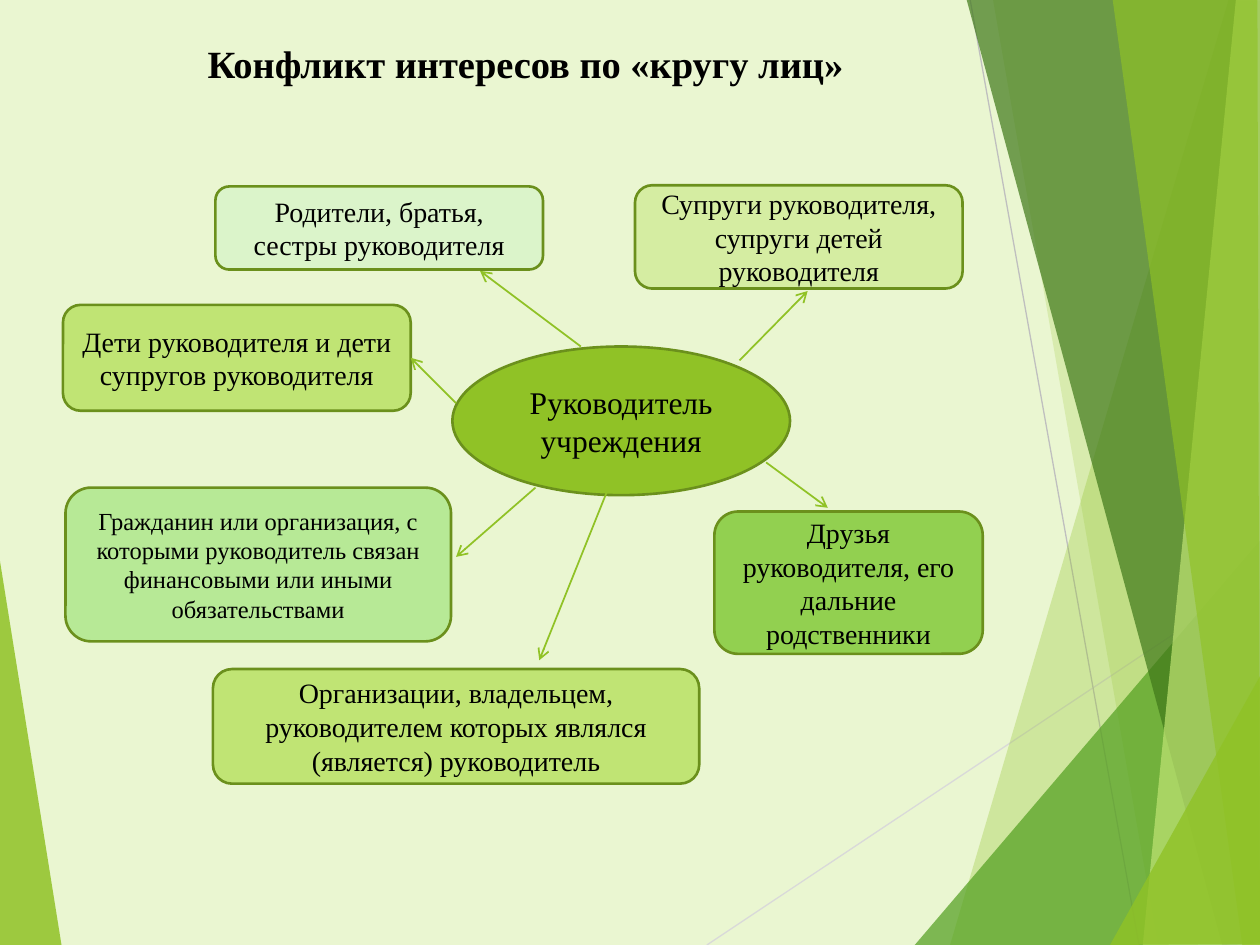
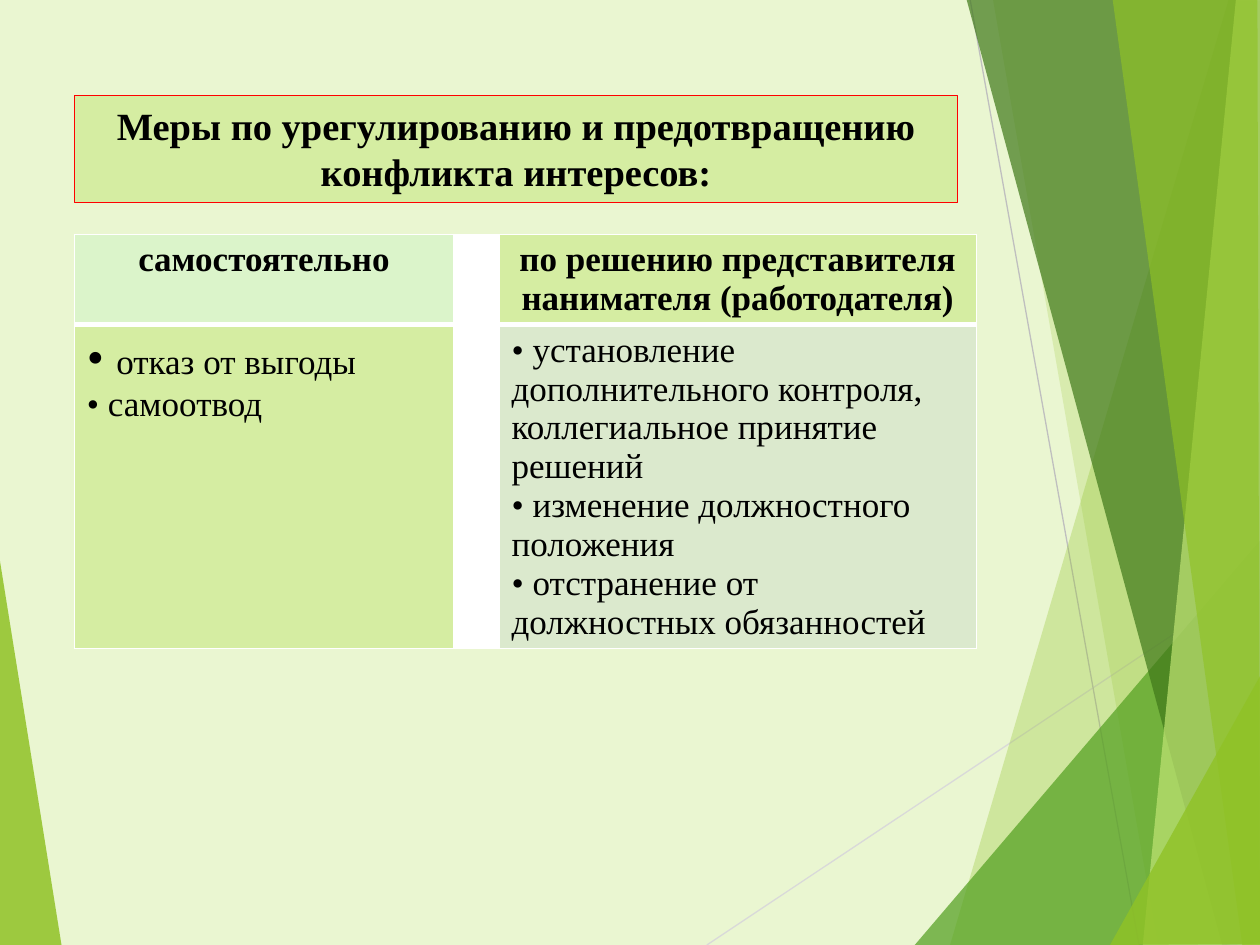
from lxml.etree import SubElement
from pptx import Presentation
from pptx.dml.color import RGBColor
from pptx.enum.shapes import MSO_CONNECTOR as Connector, MSO_SHAPE as Shape
from pptx.enum.text import MSO_ANCHOR as Anchor, MSO_AUTO_SIZE as AutoSize, PP_ALIGN as Align
from pptx.oxml.ns import qn
from pptx.util import Inches, Pt

FONT = "Times New Roman"
BLACK = RGBColor(0x00, 0x00, 0x00)
WHITE = RGBColor(0xFF, 0xFF, 0xFF)
RED = RGBColor(0xFF, 0x00, 0x00)
BACKGROUND = RGBColor(0xEA, 0xF6, 0xD1)
GREEN = RGBColor(0x90, 0xC2, 0x26)
OUTLINE = RGBColor(0x6B, 0x90, 0x1C)
LEAF = RGBColor(0x54, 0xA0, 0x21)
FOREST = RGBColor(0x3F, 0x78, 0x19)
LIME = RGBColor(0xC0, 0xE4, 0x74)
PALE_LIME = RGBColor(0xD5, 0xED, 0xA2)
MINT = RGBColor(0xDB, 0xF4, 0xCA)
FRESH = RGBColor(0x92, 0xD0, 0x50)
SOFT_GREEN = RGBColor(0xB7, 0xE9, 0x96)
GREY_GREEN = RGBColor(0xDB, 0xE9, 0xCD)
LIGHT_GREY = RGBColor(0xD9, 0xD9, 0xD9)
GREY = RGBColor(0xBF, 0xBF, 0xBF)

LEFT_WEDGE = (GREEN, 85, [(-0.01, 4.39), (0.49, 7.51), (-0.01, 7.5)])
THIN_LINES = [
    (LIGHT_GREY, (5.61, 7.5), (10.01, 4.57)),
    (GREY, (7.7, 0), (9.04, 7.5)),
]
RIGHT_FACETS = [
    (GREEN, 30, [(9.75, 0), (7.54, 7.5), (10.02, 7.51), (10.01, 0.01)]),
    (GREEN, 20, [(7.88, -0.01), (9.19, 7.5), (10.01, 7.5), (10.01, -0.01)]),
    (LEAF, 72, [(7.26, 7.5), (10, 4.29), (10.01, 7.5)]),
    (FOREST, 70, [(7.67, -0.01), (9.7, 7.5), (10.01, 7.49), (10.01, -0.01)]),
    (LIME, 70, [(9.81, -0.01), (9.07, 7.5), (10.01, 7.5), (10, -0.01)]),
    (GREEN, 65, [(8.83, -0.01), (9.86, 7.5), (10, 7.5), (9.98, -0.01)]),
    (GREEN, 80, [(8.81, 7.5), (10.01, 5.35), (10.01, 7.49)]),
]

CIRCLE_TITLE = "Конфликт интересов по «кругу лиц»"
MANAGER = ("Руководитель учреждения", (3.59, 2.75, 2.68, 1.18), GREEN, 18)
RELATED_PERSONS = {
    "children": ("Дети руководителя и дети супругов руководителя",
                 (0.5, 2.42, 2.76, 0.84), LIME, 16),
    "spouses": ("Супруги руководителя, супруги детей руководителя",
                (5.04, 1.47, 2.6, 0.82), PALE_LIME, 16),
    "parents": ("Родители, братья, сестры руководителя",
                (1.71, 1.48, 2.6, 0.66), MINT, 16),
    "friends": ("Друзья руководителя, его дальние родственники",
                (5.67, 4.06, 2.13, 1.13), FRESH, 16),
    "obligations": ("Гражданин или организация, с которыми руководитель связан "
                    "финансовыми или иными обязательствами",
                    (0.52, 3.87, 3.06, 1.22), SOFT_GREEN, 14),
    "organizations": ("Организации, владельцем, руководителем которых являлся "
                      "(является) руководитель",
                      (1.69, 5.31, 3.86, 0.91), LIME, 16),
}
ARROWS = {
    "parents": ((4.61, 2.75), (3.81, 2.15)),
    "spouses": ((5.87, 2.86), (6.41, 2.31)),
    "children": ((3.62, 3.2), (3.26, 2.84)),
    "obligations": ((4.25, 3.87), (3.62, 4.42)),
    "organizations": ((4.83, 3.87), (4.28, 5.24)),
    "friends": ((6.08, 3.67), (6.57, 4.03)),
}

MEASURES_TITLE = "Меры по урегулированию и предотвращению конфликта интересов:"
COLUMN_WIDTHS = [3.01, 0.36, 3.79]
ROW_HEIGHTS = [0.71, 2.57]
MEASURES = [
    [("самостоятельно", MINT), ("", WHITE),
     ("по решению представителя нанимателя (работодателя)", PALE_LIME)],
    [(["отказ от выгоды", "самоотвод"], PALE_LIME), ("", WHITE),
     (["установление дополнительного контроля, коллегиальное принятие решений",
       "изменение должностного положения",
       "отстранение от должностных обязанностей"], GREY_GREEN)],
]
LARGE_BULLET_ITEM = "отказ от выгоды"


def inches(values):
    return [Inches(value) for value in values]


def format_paragraph(paragraph, size, bold=False, alignment=Align.CENTER):
    paragraph.alignment = alignment
    paragraph.font.name = FONT
    paragraph.font.size = Pt(size)
    paragraph.font.bold = bold
    paragraph.font.color.rgb = BLACK


def add_facet(slide, color, opacity, points):
    start, *others = [inches(point) for point in points]
    builder = slide.shapes.build_freeform(*start)
    builder.add_line_segments(others, close=True)
    facet = builder.convert_to_shape()
    facet.shadow.inherit = False
    facet.fill.solid()
    facet.fill.fore_color.rgb = color
    color_element = facet.element.spPr.find(".//" + qn("a:srgbClr"))
    SubElement(color_element, qn("a:alpha"), val=str(opacity * 1000))
    facet.line.fill.background()
    return facet


def add_line(slide, color, start, end, width, arrow=False):
    line = slide.shapes.add_connector(Connector.STRAIGHT, *inches(start + end))
    line.line.color.rgb = color
    line.line.width = Pt(width)
    properties = line.element.spPr
    if arrow:
        SubElement(properties.find(qn("a:ln")), qn("a:tailEnd"), type="arrow")
    SubElement(properties, qn("a:effectLst"))
    return line


def decorate_layout(layout, slide):
    layout.background.fill.solid()
    layout.background.fill.fore_color.rgb = BACKGROUND
    for placeholder in list(layout.placeholders)[1:]:
        placeholder.element.getparent().remove(placeholder.element)
    parts = [add_facet(slide, *LEFT_WEDGE)]
    parts += [add_line(slide, *line, 0.75) for line in THIN_LINES]
    parts += [add_facet(slide, *facet) for facet in RIGHT_FACETS]
    for part in parts:
        layout.shapes.element.append(part.element)


def set_title(slide, text, box):
    title = slide.shapes.title
    title.left, title.top, title.width, title.height = inches(box)
    frame = title.text_frame
    frame.text = text
    frame.auto_size = AutoSize.NONE
    frame.vertical_anchor = Anchor.TOP
    format_paragraph(frame.paragraphs[0], 22, bold=True)
    return title


def add_person(slide, kind, text, box, color, size):
    person = slide.shapes.add_shape(kind, *inches(box))
    person.shadow.inherit = False
    person.fill.solid()
    person.fill.fore_color.rgb = color
    person.line.color.rgb = OUTLINE
    person.line.width = Pt(1.5)
    frame = person.text_frame
    frame.word_wrap = True
    frame.vertical_anchor = Anchor.MIDDLE
    frame.margin_top = frame.margin_bottom = 0
    frame.text = text
    format_paragraph(frame.paragraphs[0], size)
    return person


def build_circle_slide(slide):
    set_title(slide, CIRCLE_TITLE, (0.83, 0.27, 6.68, 0.77))
    add_person(slide, Shape.OVAL, *MANAGER)
    persons = {name: add_person(slide, Shape.ROUNDED_RECTANGLE, *person)
               for name, person in RELATED_PERSONS.items()}
    for name, (start, end) in ARROWS.items():
        arrow = add_line(slide, GREEN, start, end, 1, arrow=True)
        if name == "children":
            arrow.end_connect(persons[name], 3)


def set_borders(cell, widths):
    properties = cell._tc.get_or_add_tcPr()
    for side, width in widths.items():
        border = SubElement(properties, qn(f"a:ln{side}"), w=str(Pt(width)))
        fill = SubElement(border, qn("a:solidFill"))
        SubElement(fill, qn("a:srgbClr"), val=str(WHITE))


def fill_bullets(frame, items):
    for index, item in enumerate(items):
        paragraph = frame.paragraphs[0] if index == 0 else frame.add_paragraph()
        format_paragraph(paragraph, 20, alignment=Align.LEFT)
        properties = paragraph._p.get_or_add_pPr()
        properties.set("marL", "0")
        properties.set("indent", "0")
        properties.insert(0, properties.makeelement(qn("a:buFont"), {"typeface": FONT}))
        properties.insert(1, properties.makeelement(qn("a:buChar"), {"char": "•"}))
        if item == LARGE_BULLET_ITEM:
            space = paragraph.add_run()
            space.text = " "
            space.font.size = Pt(28)
            paragraph.add_run().text = item
        else:
            paragraph.add_run().text = " " + item


def build_measures_slide(slide):
    title = set_title(slide, MEASURES_TITLE, (0.59, 0.76, 7.01, 0.85))
    title.fill.solid()
    title.fill.fore_color.rgb = PALE_LIME
    title.line.color.rgb = RED
    title.line.width = Pt(0.5)

    box = (0.59, 1.86, sum(COLUMN_WIDTHS), sum(ROW_HEIGHTS))
    table = slide.shapes.add_table(len(ROW_HEIGHTS), len(COLUMN_WIDTHS), *inches(box)).table
    table.first_row = table.horz_banding = False
    for column, width in zip(table.columns, COLUMN_WIDTHS):
        column.width = Inches(width)
    for row, height in zip(table.rows, ROW_HEIGHTS):
        row.height = Inches(height)
    for row_index, row in enumerate(MEASURES):
        header = row_index == 0
        for column_index, (content, color) in enumerate(row):
            cell = table.cell(row_index, column_index)
            set_borders(cell, {"L": 1, "R": 1, "T": 1 if header else 3, "B": 3 if header else 1})
            cell.fill.solid()
            cell.fill.fore_color.rgb = color
            if isinstance(content, list):
                fill_bullets(cell.text_frame, content)
            elif content:
                cell.text_frame.text = content
                format_paragraph(cell.text_frame.paragraphs[0], 20, bold=True)


def main():
    presentation = Presentation()
    presentation.slide_width, presentation.slide_height = Inches(10), Inches(7.5)
    layout = presentation.slide_layouts[5]
    circle_slide = presentation.slides.add_slide(layout)
    decorate_layout(layout, circle_slide)
    build_circle_slide(circle_slide)
    build_measures_slide(presentation.slides.add_slide(layout))
    presentation.save("out.pptx")


if __name__ == "__main__":
    main()
